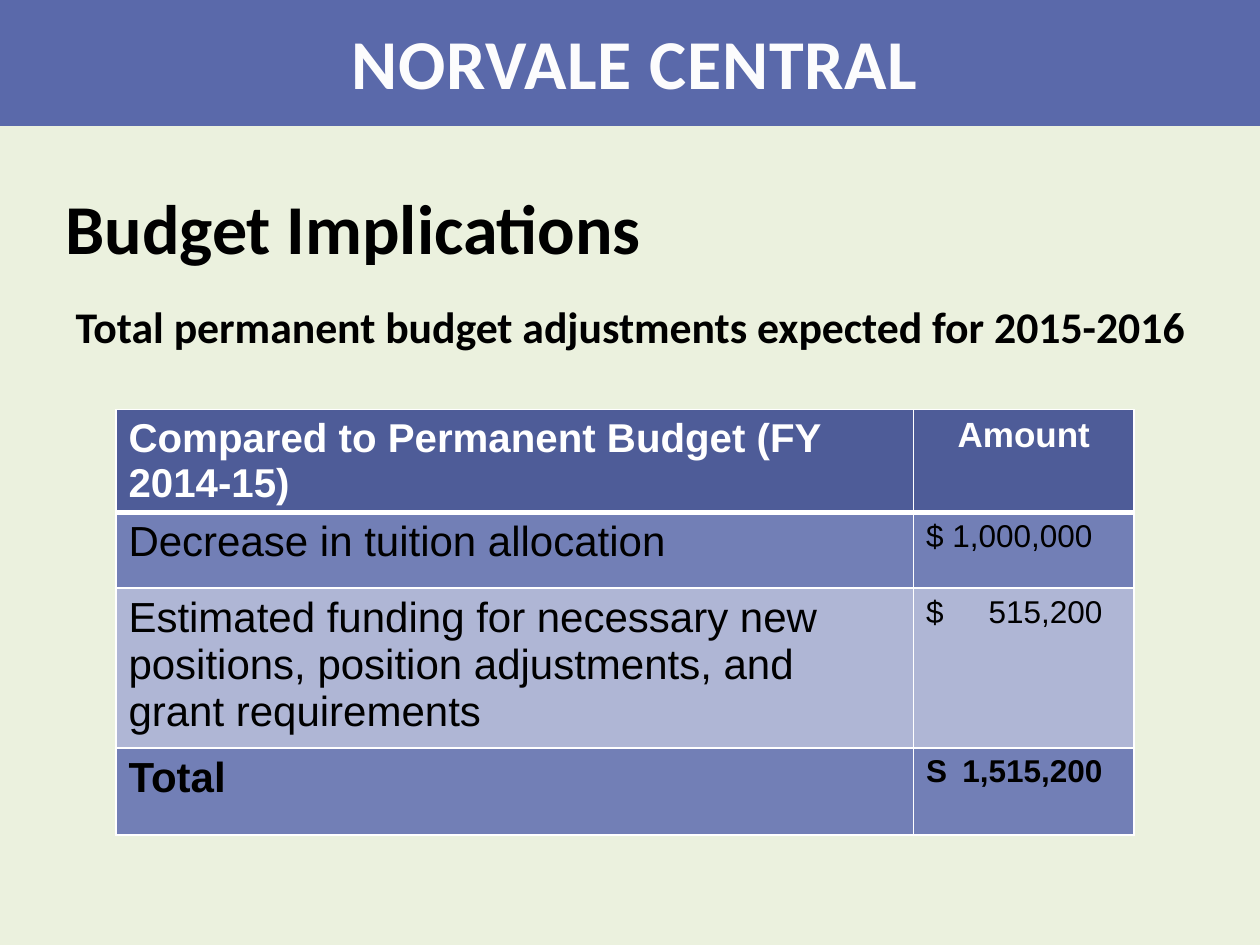
"""Build the budget implications slide."""
from dataclasses import dataclass

from lxml.etree import SubElement
from pptx import Presentation
from pptx.dml.color import RGBColor
from pptx.enum.shapes import MSO_SHAPE
from pptx.enum.text import MSO_ANCHOR, MSO_AUTO_SIZE, PP_ALIGN
from pptx.oxml.ns import qn
from pptx.util import Inches, Pt


@dataclass(frozen=True)
class Theme:
    back: str = "EBF1DE"
    band: str = "5A69AA"
    pale: str = "FCFCFD"
    ink: str = "000000"
    white: str = "FFFFFF"
    head: str = "4E5C98"
    dark: str = "727FB6"
    light: str = "AFB6D5"
    sans: str = "Calibri"
    grid: str = "Arial"
    big: int = 40
    lead: int = 25
    label: int = 24
    first: int = 23
    amount: int = 20
    value: int = 18


T = Theme()
BANNER = "NORVALE CENTRAL"
TITLE = "Budget Implications"
LEAD = "Total permanent budget adjustments expected for 2015-2016"
ROWS = [
    ("Compared to Permanent Budget (FY 2014-15)", "Amount"),
    ("Decrease in tuition allocation", "$ 1,000,000"),
    ("Estimated funding for necessary new positions, position adjustments, "
     "and grant requirements", "$\t515,200"),
    ("Total", "S\t1,515,200"),
]
WIDE = (6.33, 1.75)
HIGH = (0.5, 0.6, 1.27, 0.69)
TAB = 1.4


def color(code):
    return RGBColor.from_string(code)


def paint(fill, code):
    fill.solid()
    fill.fore_color.rgb = color(code)


def write(frame, text, size, font=T.sans, ink=T.ink, bold=True,
          align=PP_ALIGN.LEFT, anchor=MSO_ANCHOR.TOP, track=0):
    frame.word_wrap = True
    frame.vertical_anchor = anchor
    para = frame.paragraphs[0]
    para.alignment = align
    para.space_before = Pt(0)
    run = para.add_run()
    run.text = text
    face = run.font
    face.name, face.size, face.bold = font, Pt(size), bold
    face.color.rgb = color(ink)
    if track:
        face._element.set("spc", str(track))
    return para


def place(shape, left, top, width, height):
    shape.left, shape.top = Inches(left), Inches(top)
    shape.width, shape.height = Inches(width), Inches(height)
    shape.text_frame.auto_size = MSO_AUTO_SIZE.NONE
    return shape.text_frame


def border(cell, row):
    props = cell._tc.get_or_add_tcPr()
    widths = {"L": 1, "R": 1, "T": 3 if row == 1 else 1,
              "B": 3 if row == 0 else 1}
    for spot, (side, width) in enumerate(widths.items()):
        line = SubElement(props, qn("a:ln" + side), w=str(Pt(width)))
        fill = SubElement(line, qn("a:solidFill"))
        SubElement(fill, qn("a:srgbClr"), val=T.white)
        props.insert(spot, line)


def tabbed(para):
    props = para._p.get_or_add_pPr()
    stops = SubElement(props, qn("a:tabLst"))
    SubElement(stops, qn("a:tab"), pos=str(Inches(TAB)), algn="r")


def fill_grid(slide):
    table = slide.shapes.add_table(
        len(ROWS), len(WIDE), Inches(0.92), Inches(3.25),
        Inches(sum(WIDE)), Inches(sum(HIGH))).table
    for col, width in zip(table.columns, WIDE):
        col.width = Inches(width)
    for row, height in zip(table.rows, HIGH):
        row.height = Inches(height)
    for r, texts in enumerate(ROWS):
        head = r == 0
        sizes = (T.first, T.amount) if head else (T.label, T.value)
        shade = T.head if head else (T.dark if r % 2 else T.light)
        for c, text in enumerate(texts):
            cell = table.cell(r, c)
            paint(cell.fill, shade)
            border(cell, r)
            para = write(
                cell.text_frame, text, sizes[c], font=T.grid,
                ink=T.white if head else T.ink,
                bold=head or r == len(ROWS) - 1,
                align=PP_ALIGN.CENTER if head and c else PP_ALIGN.LEFT)
            if "\t" in text:
                tabbed(para)


def main():
    deck = Presentation()
    deck.slide_width, deck.slide_height = Inches(10), Inches(7.5)
    slide = deck.slides.add_slide(deck.slide_layouts[1])
    paint(slide.background.fill, T.back)
    title, body = slide.placeholders

    band = slide.shapes.add_shape(
        MSO_SHAPE.RECTANGLE, 0, 0, deck.slide_width, Inches(1))
    band.shadow.inherit = False
    paint(band.fill, T.band)
    band.line.fill.background()

    banner = slide.shapes.add_textbox(0, 0, 0, 0)
    write(place(banner, 0.5, 0.11, 9.08, 0.77), BANNER, T.big,
          ink=T.pale, align=PP_ALIGN.CENTER, track=50)
    write(place(title, 0.42, 1.43, 7.71, 0.74), TITLE, T.big,
          anchor=MSO_ANCHOR.MIDDLE)
    para = write(place(body, 0.5, 2.33, 9.08, 0.52), LEAD, T.lead)
    props = para._p.get_or_add_pPr()
    props.set("marL", str(Inches(0.5)))
    props.set("indent", str(-Inches(0.5)))
    SubElement(props, qn("a:buNone"))

    fill_grid(slide)
    deck.save("out.pptx")


if __name__ == "__main__":
    main()
